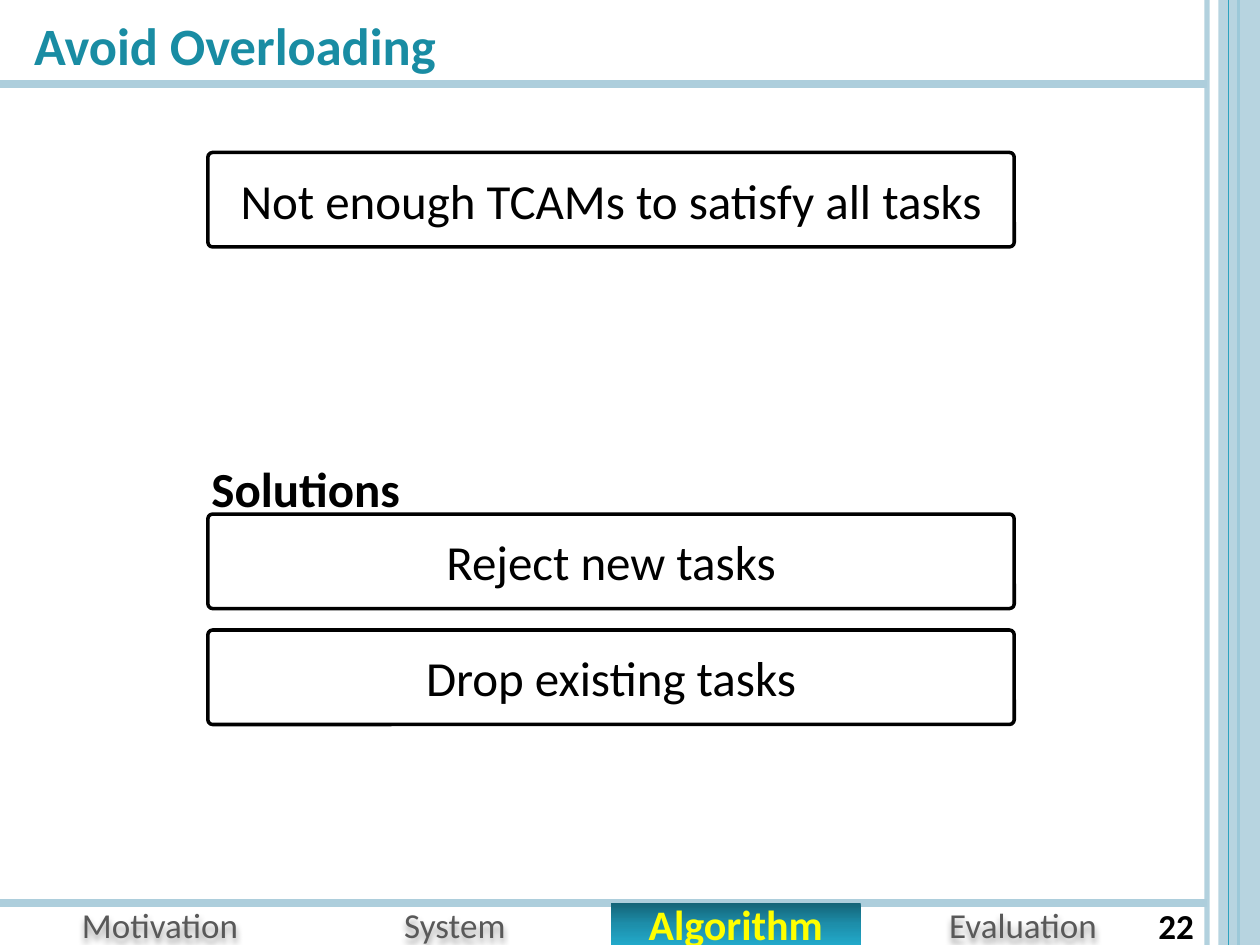
from copy import deepcopy
from lxml.etree import SubElement as Sub
from pptx import Presentation
from pptx.dml.color import RGBColor as RGB
from pptx.enum.shapes import MSO_CONNECTOR as Conn, MSO_SHAPE as Geom
from pptx.enum.text import MSO_ANCHOR as Anchor, PP_ALIGN as Align
from pptx.oxml.ns import qn
from pptx.util import Inches, Pt

HEX = {
    "pale": "ADCEDC", "teal": "2DA2BF", "title": "198CA3", "gray": "595959",
    "yellow": "FFFF00", "black": "000000", "white": "FFFFFF",
    "dark": "146478", "mid": "1D8EAA", "light": "22A9CA",
}
FONT = "Calibri"


def color(name):
    return RGB.from_string(HEX[name])


def fade(fill, pct):
    """Set the opacity of a solid fill element."""
    Sub(fill[0], qn("a:alpha"), val=str(pct * 1000))


def write(shape, text, size, hue, bold=False, align=Align.CENTER,
          anchor=Anchor.MIDDLE, wrap=True):
    frame = shape.text_frame
    frame.word_wrap = wrap
    frame.vertical_anchor = anchor
    para = frame.paragraphs[0]
    para.alignment = align
    run = para.add_run()
    run.text = text
    font = run.font
    font.name, font.size, font.bold = FONT, Pt(size), bold
    font.color.rgb = color(hue)


def add_line(slide, start, end, hue, width, alpha=None):
    line = slide.shapes.add_connector(
        Conn.STRAIGHT, *(Inches(v) for v in start + end))
    line.line.color.rgb = color(hue)
    line.line.width = Pt(width)
    props = line._element.spPr
    if alpha:
        fade(props.find(qn("a:ln")).find(qn("a:solidFill")), alpha)
    Sub(props, qn("a:effectLst"))


def add_box(slide, geom, box, fill=None):
    shape = slide.shapes.add_shape(geom, *(Inches(v) for v in box))
    shape.shadow.inherit = False
    shape.line.fill.background()
    if fill:
        shape.fill.solid()
        shape.fill.fore_color.rgb = color(fill)
    return shape


def add_text(slide, box, text, size, hue, **style):
    shape = slide.shapes.add_textbox(*(Inches(v) for v in box))
    write(shape, text, size, hue, **style)
    return shape


def add_card(slide, top, text):
    card = add_box(slide, Geom.ROUNDED_RECTANGLE, (1.65, top, 6.4, 0.75), "white")
    card.adjustments[0] = 0.05
    card.line.color.rgb = color("black")
    card.line.width = Pt(2)
    write(card, text, 28, "black")


def add_tab(slide, left, text):
    """Inactive section name with a soft shadow."""
    tab = add_text(slide, (left, 7.17, 1.9, 0.33), text, 20, "gray")
    effects = Sub(tab._element.spPr, qn("a:effectLst"))
    shade = Sub(effects, qn("a:outerShdw"), blurRad="50800", dist="38100",
                dir="5400000", algn="t", rotWithShape="0")
    hue = Sub(shade, qn("a:srgbClr"), val=HEX["black"])
    Sub(hue, qn("a:alpha"), val="40000")


def add_active(slide, left, text):
    """Current section name on a three-stop gradient."""
    tab = add_box(slide, Geom.RECTANGLE, (left, 7.17, 1.98, 0.33))
    tab.fill.gradient()
    tab.fill.gradient_angle = 270
    stops = tab._element.spPr.find(qn("a:gradFill")).find(qn("a:gsLst"))
    stops.insert(1, deepcopy(stops[0]))
    for stop, hue, place in zip(tab.fill.gradient_stops,
                                ("dark", "mid", "light"), (0, 0.5, 1)):
        stop.color.rgb = color(hue)
        stop.position = place
    write(tab, text, 24, "yellow", bold=True)


def add_frame(slide):
    # Right edge
    add_line(slide, (9.58, 0), (9.58, 7.5), "pale", 3, 93)
    add_line(slide, (9.83, 0), (9.83, 7.5), "teal", 1.5)
    band = add_box(slide, Geom.RECTANGLE, (9.67, 0, 0.33, 7.5), "pale")
    fade(band._element.spPr.find(qn("a:solidFill")), 87)
    add_line(slide, (9.75, 0), (9.75, 7.5), "teal", 0.75)
    # Header and footer rules
    for y in (0.67, 7.17):
        add_line(slide, (0, y), (9.58, y), "pale", 4.5)


def main():
    prs = Presentation()
    prs.slide_width, prs.slide_height = Inches(10), Inches(7.5)
    slide = prs.slides.add_slide(prs.slide_layouts[5])
    add_frame(slide)

    # Section bar
    for left, text in ((0.32, "Motivation"), (2.66, "System"), (7.17, "Evaluation")):
        add_tab(slide, left, text)
    add_active(slide, 4.85, "Algorithm")
    add_text(slide, (9, 7.06, 0.67, 0.57), "22", 20, "black", bold=True)

    # Title
    title = slide.shapes.title
    title.left, title.top = Inches(0.17), Inches(0.05)
    title.width, title.height = Inches(9.42), Inches(0.78)
    write(title, "Avoid Overloading", 30, "title", bold=True,
          align=Align.LEFT, anchor=Anchor.TOP)

    # Problem and solutions
    for top, text in ((1.21, "Not enough TCAMs to satisfy all tasks"),
                      (4.08, "Reject new tasks"), (5, "Drop existing tasks")):
        add_card(slide, top, text)
    add_text(slide, (1.58, 3.59, 2.08, 0.57), "Solutions", 28, "black",
             bold=True, align=Align.LEFT, anchor=Anchor.TOP)

    prs.save("out.pptx")


if __name__ == "__main__":
    main()
